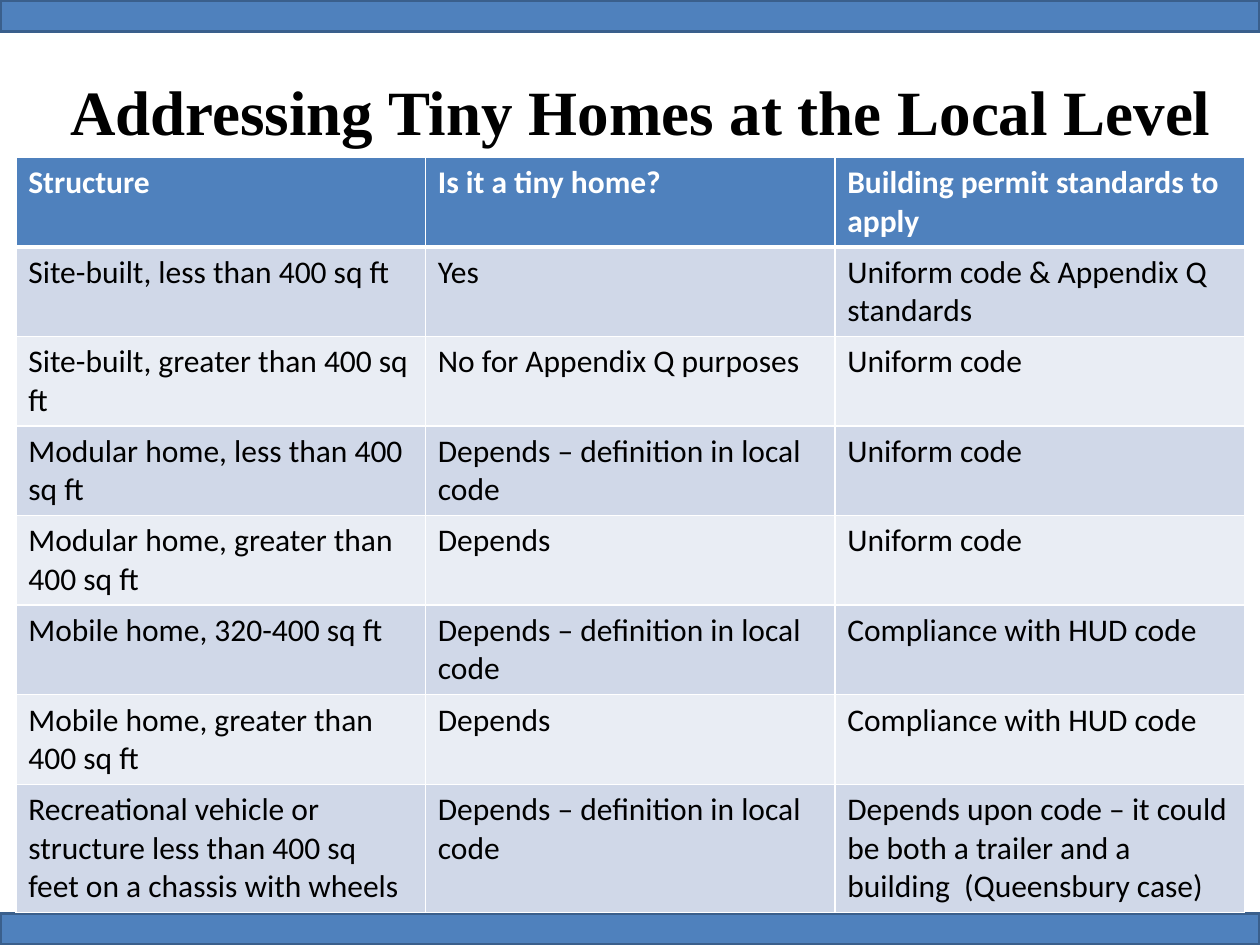
from dataclasses import dataclass

from lxml import etree
from pptx import Presentation
from pptx.dml.color import RGBColor
from pptx.enum.shapes import MSO_SHAPE
from pptx.enum.text import MSO_ANCHOR, PP_ALIGN
from pptx.oxml.ns import qn
from pptx.util import Inches, Pt

RECTANGLE = MSO_SHAPE.RECTANGLE
MIDDLE = MSO_ANCHOR.MIDDLE
CENTER, LEFT = PP_ALIGN.CENTER, PP_ALIGN.LEFT
TITLE_ONLY = 5


@dataclass(frozen=True)
class Theme:
    accent: str = "4F81BD"
    accent_edge: str = "3A5F8C"
    ink: str = "000000"
    paper: str = "FFFFFF"
    stripes: tuple = ("D0D8E8", "E9EDF4")
    title_font: str = "Times New Roman"
    body_font: str = "Calibri"
    title_size: int = 36
    body_size: int = 18


THEME = Theme()
SLIDE_W, SLIDE_H = 10, 7.5
BAND_H = SLIDE_H / 30
ROW_H = 0.59

HEADINGS = ("Structure", "Is it a tiny home?", "Building permit standards to apply")
LOCAL = "Depends – definition in local code"
STANDARDS = (
    ("Site-built, less than 400 sq ft", "Yes", "Uniform code & Appendix Q standards"),
    ("Site-built, greater than 400 sq ft", "No for Appendix Q purposes", "Uniform code"),
    ("Modular home, less than 400 sq ft", LOCAL, "Uniform code"),
    ("Modular home, greater than 400 sq ft", "Depends", "Uniform code"),
    ("Mobile home, 320-400 sq ft", LOCAL, "Compliance with HUD code"),
    ("Mobile home, greater than 400 sq ft", "Depends", "Compliance with HUD code"),
    ("Recreational vehicle or structure less than 400 sq feet on a chassis with wheels",
     LOCAL,
     "Depends upon code – it could be both a trailer and a building  (Queensbury case)"),
)


def rgb(color):
    return RGBColor.from_string(color)


def inches(box):
    return [Inches(length) for length in box]


def write(frame, text, font=THEME.body_font, size=THEME.body_size,
          color=THEME.ink, bold=False, align=LEFT):
    paragraph = frame.paragraphs[0]
    paragraph.alignment = align
    run = paragraph.add_run()
    run.text = text
    run.font.name, run.font.size, run.font.bold = font, Pt(size), bold
    run.font.color.rgb = rgb(color)


def place_title(slide, box, text):
    title = slide.shapes.title
    title.left, title.top, title.width, title.height = inches(box)
    title.text_frame.vertical_anchor = MIDDLE
    write(title.text_frame, text, font=THEME.title_font, size=THEME.title_size,
          bold=True, align=CENTER)


def add_band(slide, box):
    band = slide.shapes.add_shape(RECTANGLE, *inches(box))
    band.shadow.inherit = False
    band.fill.solid()
    band.fill.fore_color.rgb = rgb(THEME.accent)
    band.line.color.rgb = rgb(THEME.accent_edge)
    band.line.width = Pt(2)


def set_borders(cell, bottom=1):
    """Draw the four cell edges, which must precede the fill in the XML."""
    properties = cell._tc.get_or_add_tcPr()
    widths = {"a:lnL": 1, "a:lnR": 1, "a:lnT": 1, "a:lnB": bottom}
    for position, (tag, width) in enumerate(widths.items()):
        edge = etree.Element(qn(tag), w=str(Pt(width)))
        fill = etree.SubElement(edge, qn("a:solidFill"))
        etree.SubElement(fill, qn("a:srgbClr"), val=THEME.paper)
        properties.insert(position, edge)


def add_standards_table(slide, box, headings, records):
    rows = (headings, *records)
    table = slide.shapes.add_table(len(rows), len(headings), *inches(box)).table
    for row_index, texts in enumerate(rows):
        table.rows[row_index].height = Inches(ROW_H)
        is_heading = row_index == 0
        fill = THEME.accent if is_heading else THEME.stripes[(row_index - 1) % 2]
        for column, text in enumerate(texts):
            cell = table.cell(row_index, column)
            cell.fill.solid()
            cell.fill.fore_color.rgb = rgb(fill)
            # The heading row is closed by a heavier rule
            top_rule = 3 if row_index == 1 else 1
            set_borders(cell, bottom=3 if is_heading else 1)
            if top_rule > 1:
                cell._tc.tcPr.find(qn("a:lnT")).set("w", str(Pt(top_rule)))
            write(cell.text_frame, text, bold=is_heading,
                  color=THEME.paper if is_heading else THEME.ink)


def main():
    deck = Presentation()
    deck.slide_width, deck.slide_height = Inches(SLIDE_W), Inches(SLIDE_H)
    slide = deck.slides.add_slide(deck.slide_layouts[TITLE_ONLY])

    # Heading
    place_title(slide, (0.17, BAND_H, SLIDE_W - 0.17, 1.25),
                "Addressing Tiny Homes at the Local Level")

    # Bands along the top and bottom edges
    for top in (0, SLIDE_H - BAND_H):
        add_band(slide, (0, top, SLIDE_W, BAND_H))

    # Permit standards by structure
    table_w = SLIDE_W * 0.975
    add_standards_table(slide, ((SLIDE_W - table_w) / 2, SLIDE_H / 6, table_w, 5.9),
                        HEADINGS, STANDARDS)

    deck.save("out.pptx")


if __name__ == "__main__":
    main()
